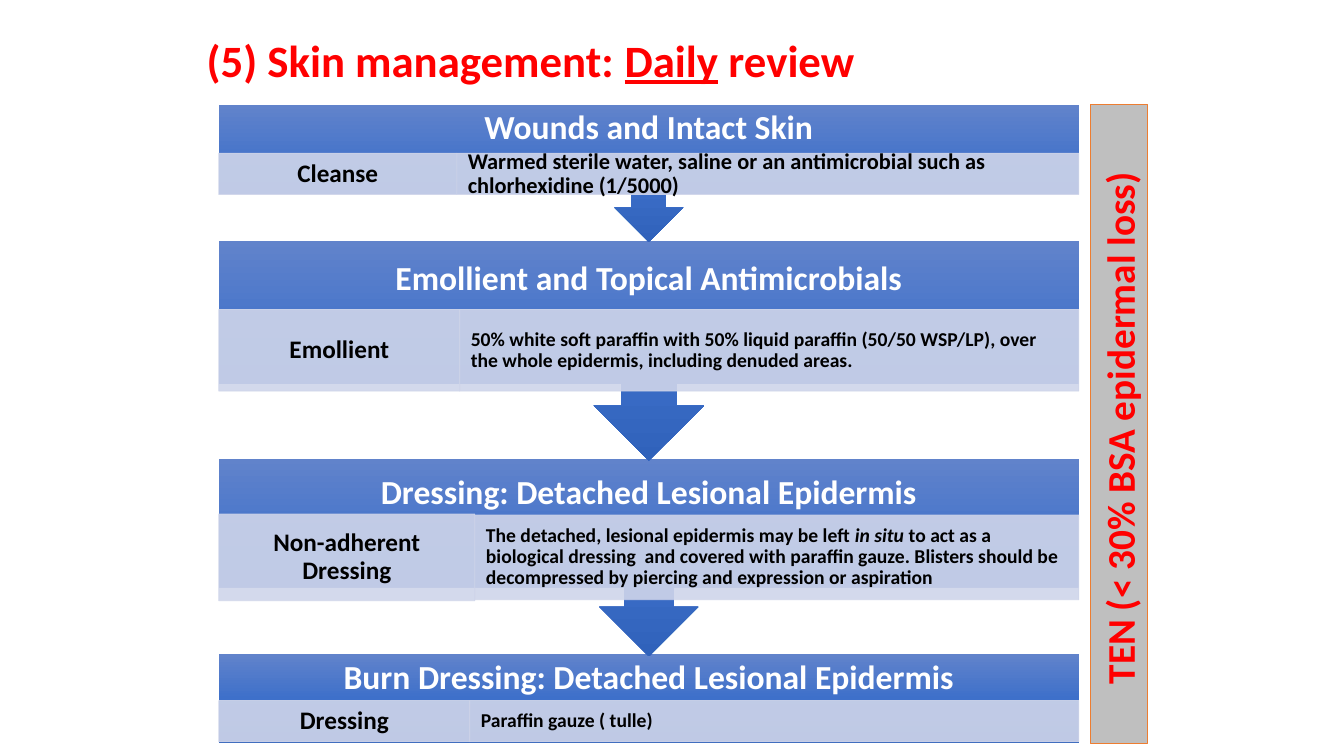
from lxml import etree
from pptx import Presentation
from pptx.dml.color import RGBColor
from pptx.enum.shapes import MSO_SHAPE as SHAPE
from pptx.enum.text import MSO_ANCHOR as ANCHOR, MSO_AUTO_SIZE as AUTO_SIZE, PP_ALIGN as ALIGN
from pptx.oxml import parse_xml
from pptx.oxml.ns import nsdecls, qn
from pptx.util import Inches, Pt

COLORS = {
    "red": "FF0000", "white": "FFFFFF", "black": "000000",
    "cell": "CFD5EA", "bar": "BFBFBF", "bar_edge": "ED7D31",
    "step_light": "6183CB", "step_mid": "3E70CA", "step_dark": "3062BB",
}
FONT = "Calibri"
STEP_LEFT, STEP_WIDTH = 2.17, 8.53

# Steps from top to bottom; all lengths in inches
STEPS = [
    dict(top=1.04, height=1.36, head=0.48, row=(1.52, 0.41), label_width=2.36,
         title="Wounds and Intact Skin", label="Cleanse", size=16,
         detail=["Warmed sterile water, saline or an antimicrobial such as "
                 "chlorhexidine (1/5000)"]),
    dict(top=2.39, height=2.18, head=0.76, row=(3.07, 0.81), label_width=2.39,
         title="Emollient and Topical Antimicrobials", label="Emollient",
         detail=["50% white soft paraffin with 50% liquid paraffin (50/50 WSP/LP), "
                 "over the whole epidermis, including denuded areas."]),
    dict(top=4.55, height=1.96, head=0.69, row=(5.1, 0.86), label_width=2.54, trim=0.01,
         title="Dressing: Detached Lesional Epidermis", label="Non-adherent Dressing",
         detail=["The detached, lesional epidermis may be left ",
                 ("in situ ", {"italic": True}),
                 "to act as a biological dressing  and covered with paraffin gauze. "
                 "Blisters should be decompressed by piercing and expression or aspiration"]),
    dict(top=6.49, height=0.88, head=0.48, row=(6.95, 0.41), label_width=2.49, arrow=False,
         title="Burn Dressing: Detached Lesional Epidermis", label="Dressing",
         detail=["Paraffin gauze ( tulle)"]),
]


def rgb(name):
    return RGBColor.from_string(COLORS[name])


def inches(box):
    return [Inches(length) for length in box]


def write(frame, runs, size, color, align=ALIGN.CENTER, line_spacing=None,
          after=None, insets=(0.1, 0.05)):
    """Fill a text frame with one bold paragraph of plain or formatted runs."""
    frame.word_wrap = True
    frame.vertical_anchor = ANCHOR.MIDDLE
    frame.margin_left = frame.margin_right = Inches(insets[0])
    frame.margin_top = frame.margin_bottom = Inches(insets[1])
    paragraph = frame.paragraphs[0]
    paragraph.alignment = align
    if line_spacing:
        paragraph.line_spacing = line_spacing
    if after:
        spacing = etree.SubElement(paragraph._p.get_or_add_pPr(), qn("a:spcAft"))
        etree.SubElement(spacing, qn("a:spcPct")).set("val", str(after * 1000))
    for part in runs:
        words, style = (part, {}) if isinstance(part, str) else part
        run = paragraph.add_run()
        run.text = words
        font = run.font
        font.name, font.size, font.bold = FONT, Pt(size), True
        font.color.rgb = rgb(color)
        for key, value in style.items():
            setattr(font, key, value)


def add_gradient(shape):
    gradient = parse_xml(f'<a:gradFill {nsdecls("a")} rotWithShape="0"><a:gsLst/>'
                         '<a:lin ang="5400000" scaled="0"/></a:gradFill>')
    for position, name in enumerate(("step_light", "step_mid", "step_dark")):
        stop = etree.SubElement(gradient[0], qn("a:gs"), pos=str(position * 50000))
        etree.SubElement(stop, qn("a:srgbClr"), val=COLORS[name])
    shape._element.spPr.append(gradient)


def add_cell(slide, box, runs, **text_format):
    cell = slide.shapes.add_shape(SHAPE.RECTANGLE, *inches(box))
    cell.shadow.inherit = False
    cell.fill.solid()
    cell.fill.fore_color.rgb = rgb("cell")
    cell.line.color.rgb = rgb("cell")
    cell.line.width = Pt(0.5)
    # 90 % opacity for both fill and outline
    for color in cell._element.spPr.iter(qn("a:srgbClr")):
        etree.SubElement(color, qn("a:alpha"), val="90000")
    write(cell.text_frame, runs, color="black", line_spacing=0.9, after=35, **text_format)


def add_step(slide, top, height, head, row, label_width, title, label, detail,
             size=14, trim=0, arrow=True):
    # Block, pointing down to the next step
    kind = SHAPE.UP_ARROW_CALLOUT if arrow else SHAPE.RECTANGLE
    block = slide.shapes.add_shape(kind, *inches((STEP_LEFT, top, STEP_WIDTH, height)))
    block.rotation = 180 if arrow else 0
    add_gradient(block)
    block.line.fill.background()
    block.shadow.inherit = False
    # Heading
    heading = slide.shapes.add_textbox(*inches((STEP_LEFT, top, STEP_WIDTH, head)))
    write(heading.text_frame, [title], 24, "white", line_spacing=0.9, after=35,
          insets=(0.19, 0.19))
    # Label and detail side by side
    row_top, row_height = row
    add_cell(slide, (STEP_LEFT, row_top, label_width, row_height), [label],
             size=18, insets=(0.14, 0.03))
    add_cell(slide, (STEP_LEFT + label_width, row_top + trim,
                     STEP_WIDTH - label_width, row_height - 2 * trim),
             detail, size=size, align=ALIGN.LEFT, insets=(0.11, 0.02))


def add_title(slide, box):
    title = slide.shapes.title
    title.left, title.top, title.width, title.height = inches(box)
    title.text_frame.auto_size = AUTO_SIZE.NONE
    write(title.text_frame,
          ["(5) Skin management: ", ("Daily", {"underline": True}), " review"],
          32, "red", align=ALIGN.LEFT, line_spacing=0.9)


def add_severity_bar(slide, box):
    bar = slide.shapes.add_shape(SHAPE.RECTANGLE, *inches(box))
    bar.rotation = 270
    bar.shadow.inherit = False
    bar.fill.solid()
    bar.fill.fore_color.rgb = rgb("bar")
    bar.line.color.rgb = rgb("bar_edge")
    bar.line.width = Pt(0.5)
    write(bar.text_frame, ["TEN (< 30% BSA epidermal loss) "], 28, "red")
    bar.text_frame.auto_size = AUTO_SIZE.SHAPE_TO_FIT_TEXT


def main():
    deck = Presentation()
    deck.slide_width, deck.slide_height = Inches(13.33), Inches(7.5)
    slide = deck.slides.add_slide(deck.slide_layouts[5])
    add_title(slide, (1.95, 0, 9, 1.25))
    # Lowest step first, so each arrow lies over the step below it
    for step in reversed(STEPS):
        add_step(slide, **step)
    add_severity_bar(slide, (7.93, 3.92, 6.34, 0.57))
    deck.save("out.pptx")


if __name__ == "__main__":
    main()
